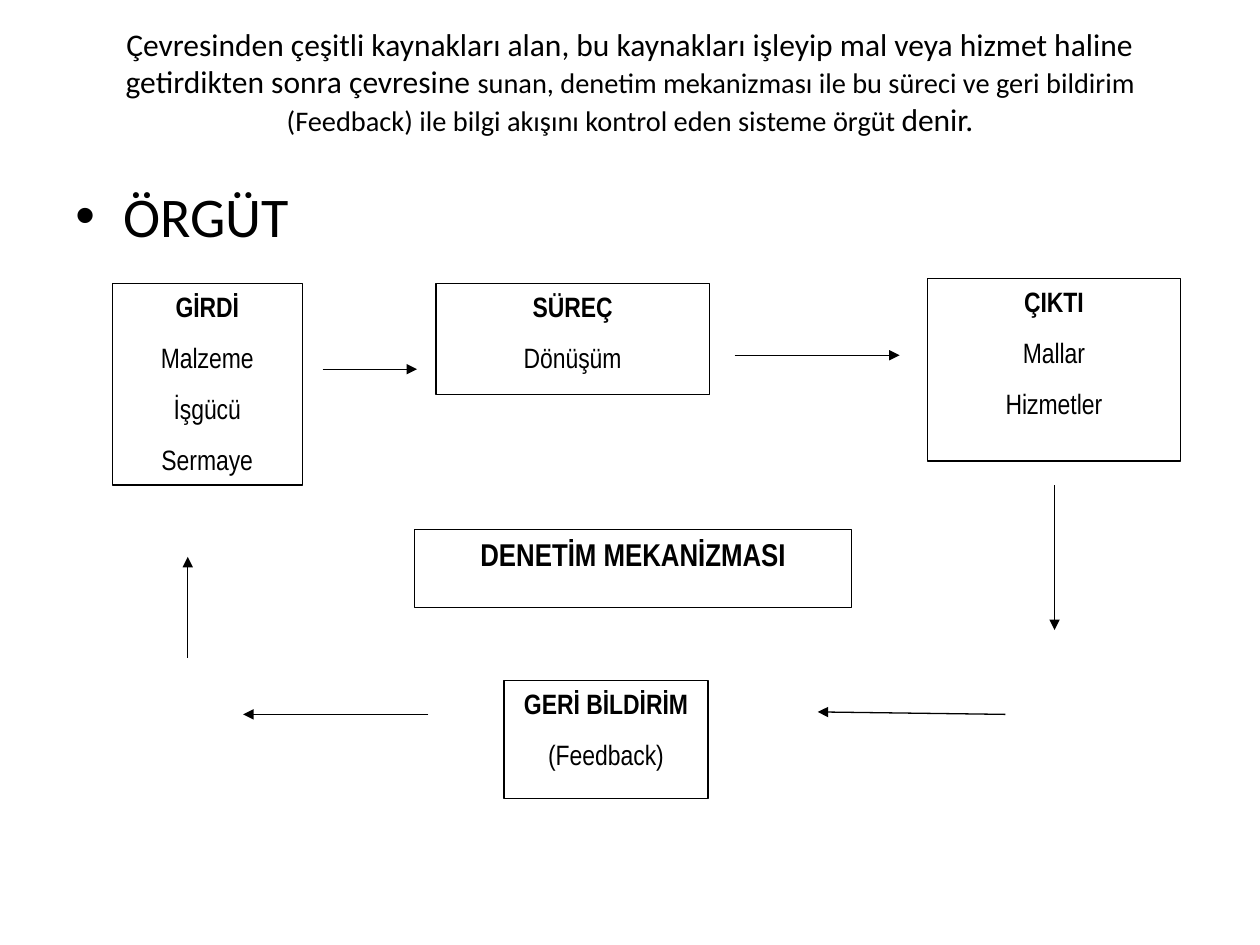
from lxml.etree import SubElement
from pptx import Presentation
from pptx.dml.color import RGBColor
from pptx.enum.shapes import MSO_CONNECTOR, MSO_SHAPE
from pptx.enum.text import MSO_ANCHOR, MSO_AUTO_SIZE, PP_ALIGN
from pptx.oxml.ns import qn
from pptx.util import Inches, Pt

COLORS = {"ink": "000000", "paper": "FFFFFF"}

deck = Presentation()
deck.slide_width = Inches(10)
deck.slide_height = Inches(7.5)
column = deck.slide_width / 100
row = deck.slide_height / 75
page = deck.slides.add_slide(deck.slide_layouts[5])


def place(left, top, width, height):
    return [round(size) for size in (left * column, top * row, width * column, height * row)]


def add_span(para, text, size, font, bold=False):
    span = para.add_run()
    span.text = text
    span.font.size = Pt(size)
    span.font.name = font
    span.font.bold = bold
    span.font.color.rgb = RGBColor.from_string(COLORS["ink"])


title = page.shapes.title
title.left, title.top, title.width, title.height = place(5, 3, 90, 6.9)
title.text_frame.auto_size = MSO_AUTO_SIZE.NONE
title.text_frame.vertical_anchor = MSO_ANCHOR.MIDDLE
para = title.text_frame.paragraphs[0]
para.alignment = PP_ALIGN.CENTER
for text, size in [
    ("Çevresinden çeşitli kaynakları alan, bu kaynakları işleyip mal veya hizmet haline getirdikten sonra çevresine ", 18),
    ("sunan, denetim mekanizması ile bu süreci ve geri bildirim (Feedback) ile bilgi akışını kontrol eden sisteme örgüt ", 16.2),
    ("denir.", 18),
]:
    add_span(para, text, size, "Calibri")

heading = page.shapes.add_textbox(*place(5, 13.9, 90, 53.1))
heading.text_frame.word_wrap = True
para = heading.text_frame.paragraphs[0]
add_span(para, "ÖRGÜT", 32, "Calibri")
properties = para._p.get_or_add_pPr()
properties.set("marL", str(Inches(0.38)))
properties.set("indent", str(-Inches(0.38)))
SubElement(properties, qn("a:buFont")).set("typeface", "Arial")
SubElement(properties, qn("a:buChar")).set("char", "•")

stages = [
    ((8.9, 22.5, 15.1, 16), 16, ["GİRDİ", "Malzeme", "İşgücü", "Sermaye"]),
    ((34.6, 22.5, 21.7, 8.8), 16, ["SÜREÇ", "Dönüşüm"]),
    ((73.6, 22.1, 20.1, 14.5), 16, ["ÇIKTI", "Mallar", "Hizmetler"]),
    ((32.9, 42, 34.7, 6.2), 18, ["DENETİM MEKANİZMASI"]),
    ((40, 54, 16.2, 9.4), 16, ["GERİ BİLDİRİM", "(Feedback)"]),
]
for area, size, lines in stages:
    box = page.shapes.add_shape(MSO_SHAPE.RECTANGLE, *place(*area))
    box.shadow.inherit = False
    box.fill.solid()
    box.fill.fore_color.rgb = RGBColor.from_string(COLORS["paper"])
    box.line.color.rgb = RGBColor.from_string(COLORS["ink"])
    box.line.width = Pt(0.75)
    frame = box.text_frame
    frame.word_wrap = True
    frame.vertical_anchor = MSO_ANCHOR.TOP
    for index, text in enumerate(lines):
        para = frame.add_paragraph() if index else frame.paragraphs[0]
        para.alignment = PP_ALIGN.CENTER
        para.space_after = Pt(10)
        add_span(para, text, size, "Arial Narrow", bold=index == 0)

flows = [
    (25.6, 29.3, 33.1, 29.3),
    (58.3, 28.2, 71.4, 28.2),
    (83.7, 38.5, 83.7, 50),
    (79.8, 56.7, 64.9, 56.5),
    (34, 56.7, 19.3, 56.7),
    (14.9, 52.2, 14.9, 44.2),
]
for ends in flows:
    arrow = page.shapes.add_connector(MSO_CONNECTOR.STRAIGHT, *place(*ends))
    arrow.line.color.rgb = RGBColor.from_string(COLORS["ink"])
    arrow.line.width = Pt(0.75)
    SubElement(arrow.line._get_or_add_ln(), qn("a:tailEnd")).set("type", "triangle")
    SubElement(arrow._element.spPr, qn("a:effectLst"))

deck.save("out.pptx")
